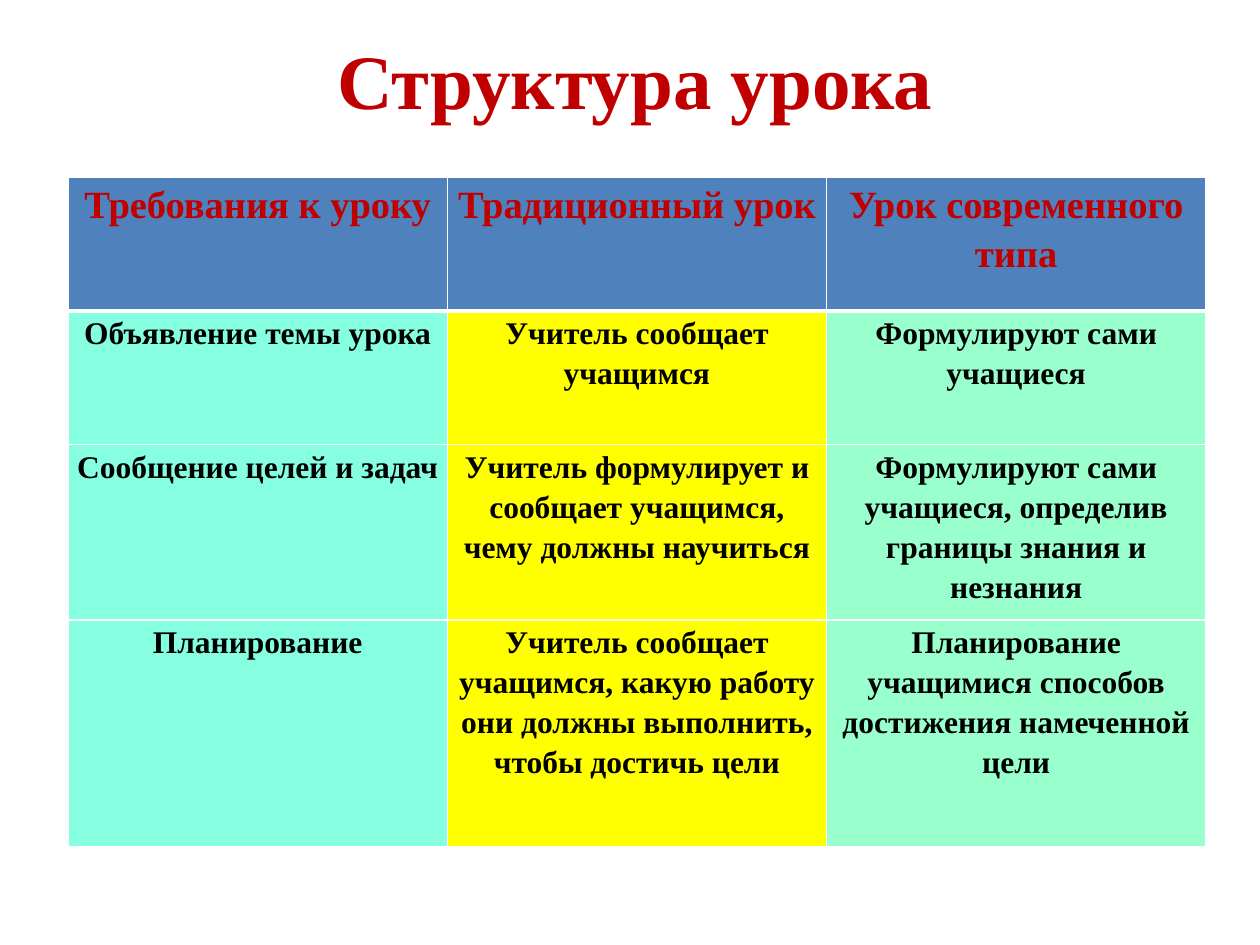
from dataclasses import dataclass

from lxml import etree
from pptx import Presentation
from pptx.dml.color import RGBColor
from pptx.enum.text import MSO_ANCHOR, PP_ALIGN
from pptx.oxml.ns import qn
from pptx.util import Inches, Pt

CENTER = PP_ALIGN.CENTER
MIDDLE = MSO_ANCHOR.MIDDLE
FONT = "Times New Roman"
RED, BLACK, WHITE = "C00000", "000000", "FFFFFF"
HEADER_FILL = "4F81BD"
COLUMN_FILLS = ("85FFE0", "FFFF00", "99FFCC")
LEFT = 0.54
TABLE_TOP = 1.41
COLUMN_WIDTH = 3.01
HANGING_INDENT = -0.1
THIN, THICK = 1, 3
CELL_MARGINS = {"margin_left": 0.07, "margin_right": 0.07,
                "margin_top": 0, "margin_bottom": 0}
CELL_SPACING = {"line_spacing": 1.15, "space_after": Pt(10)}


@dataclass
class Row:
    height: float
    texts: tuple[str, str, str]


ROWS = (
    Row(1.06, ("Требования к уроку", "Традиционный урок", "Урок современного типа")),
    Row(1.06, ("Объявление темы урока", "Учитель сообщает учащимся",
               "Формулируют сами учащиеся")),
    Row(1.39, ("Сообщение целей и задач",
               "Учитель формулирует и сообщает учащимся, чему должны научиться",
               "Формулируют сами учащиеся, определив границы знания и незнания")),
    Row(1.8, ("Планирование",
              "Учитель сообщает учащимся, какую работу они должны выполнить, "
              "чтобы достичь цели",
              "Планирование учащимися способов достижения намеченной цели")),
)


def color(value: str) -> RGBColor:
    return RGBColor.from_string(value)


def write(paragraph, text: str, size: float, ink: str) -> None:
    paragraph.alignment = CENTER
    run = paragraph.add_run()
    run.text = text
    for name, value in {"name": FONT, "size": Pt(size), "bold": True}.items():
        setattr(run.font, name, value)
    run.font.color.rgb = color(ink)


def add_borders(cell, top: float, bottom: float) -> None:
    """Draw white cell edges; top and bottom are widths in points."""
    properties = cell._tc.get_or_add_tcPr()
    widths = {"a:lnL": THIN, "a:lnR": THIN, "a:lnT": top, "a:lnB": bottom}
    for tag, width in widths.items():
        line = etree.SubElement(properties, qn(tag), w=str(Pt(width)))
        fill = etree.SubElement(line, qn("a:solidFill"))
        etree.SubElement(fill, qn("a:srgbClr"), val=WHITE)


def fill_cell(cell, text: str, row: int, column: int) -> None:
    is_header = row == 0
    for name, value in CELL_MARGINS.items():
        setattr(cell, name, Inches(value))
    add_borders(cell, THICK if row == 1 else THIN, THICK if is_header else THIN)
    cell.fill.solid()
    cell.fill.fore_color.rgb = color(HEADER_FILL if is_header else COLUMN_FILLS[column])
    paragraph = cell.text_frame.paragraphs[0]
    for name, value in CELL_SPACING.items():
        setattr(paragraph, name, value)
    indent = paragraph._p.get_or_add_pPr()
    indent.set("marL", "0")
    indent.set("indent", str(Inches(HANGING_INDENT)))
    write(paragraph, text, 22 if is_header else 18, RED if is_header else BLACK)


def add_title(slide, text: str) -> None:
    title = slide.shapes.add_textbox(Inches(LEFT), 0, Inches(9), Inches(1.25))
    frame = title.text_frame
    frame.word_wrap = True
    frame.vertical_anchor = MIDDLE
    write(frame.paragraphs[0], text, 44, RED)


def add_comparison(slide) -> None:
    columns = len(COLUMN_FILLS)
    table = slide.shapes.add_table(
        len(ROWS), columns, Inches(LEFT), Inches(TABLE_TOP),
        Inches(COLUMN_WIDTH * columns), Inches(sum(row.height for row in ROWS))).table
    for column in table.columns:
        column.width = Inches(COLUMN_WIDTH)
    for r, row in enumerate(ROWS):
        table.rows[r].height = Inches(row.height)
        for c, text in enumerate(row.texts):
            fill_cell(table.cell(r, c), text, r, c)


def main() -> None:
    deck = Presentation()
    deck.slide_width, deck.slide_height = Inches(10), Inches(7.5)
    slide = deck.slides.add_slide(deck.slide_layouts[6])
    add_title(slide, "Структура урока")
    add_comparison(slide)
    deck.save("out.pptx")


if __name__ == "__main__":
    main()
